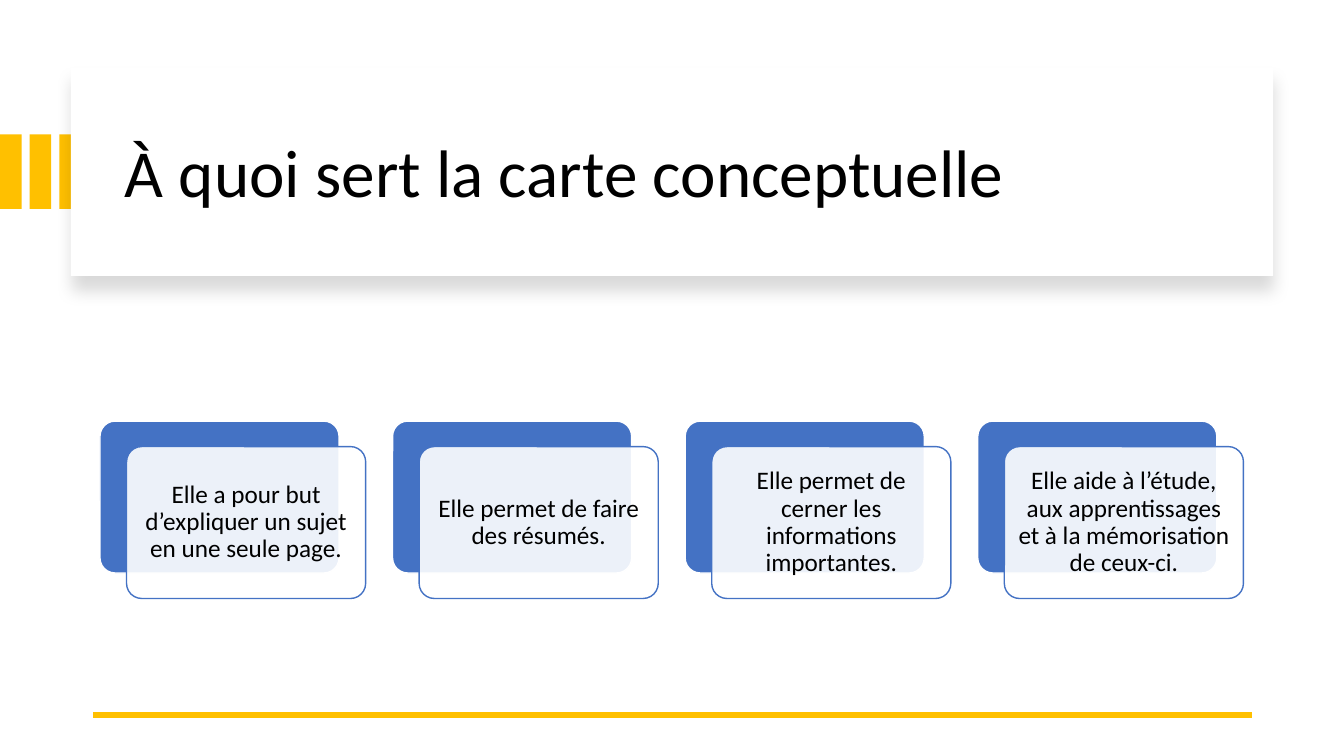
from lxml import etree
from pptx import Presentation
from pptx.dml.color import RGBColor
from pptx.enum import shapes, text
from pptx.oxml import ns
from pptx.util import Pt

COLORS = {"gold": "FFC000", "blue": "4472C4", "white": "FFFFFF", "black": "000000"}
FONT = "Calibri"
TITLE = "À quoi sert la carte conceptuelle"
PURPOSES = [
    "Elle a pour but d’expliquer un sujet en une seule page.",
    "Elle permet de faire des résumés.",
    "Elle permet de cerner les informations importantes.",
    "Elle aide à l’étude, aux apprentissages et à la mémorisation de ceux-ci.",
]
CARD_LEFT, CARD_TOP, CARD_PITCH = 71.4, 300.8, 209
CARD_W, CARD_H = 170.8, 108.5
FRONT_DX, FRONT_DY = 19, 18.2
BAR_PITCH = 21.2


def rgb(name):
    return RGBColor.from_string(COLORS[name])


def sub(parent, tag, **attrs):
    return etree.SubElement(parent, ns.qn(tag), {k: str(v) for k, v in attrs.items()})


def add_box(parent, kind, left, top, width, height, fill, line=None):
    sp = parent.add_shape(kind, Pt(left), Pt(top), Pt(width), Pt(height))
    sp.shadow.inherit = False
    sp.fill.solid()
    sp.fill.fore_color.rgb = rgb(fill)
    if line:
        sp.line.color.rgb = rgb(line)
        sp.line.width = Pt(1)
    else:
        sp.line.fill.background()
    return sp


def add_rect(parent, left, top, width, height, fill):
    return add_box(parent, shapes.MSO_SHAPE.RECTANGLE, left, top, width, height, fill)


def add_rounded(parent, left, top, fill, line):
    sp = add_box(parent, shapes.MSO_SHAPE.ROUNDED_RECTANGLE,
                 left, top, CARD_W, CARD_H, fill, line)
    sp.adjustments[0] = 0.1
    return sp


def write_text(sp, content, size, align):
    tf = sp.text_frame
    tf.word_wrap = True
    tf.vertical_anchor = text.MSO_ANCHOR.MIDDLE
    p = tf.paragraphs[0]
    p.alignment = align
    p.line_spacing = 0.9
    r = p.add_run()
    r.text = content
    r.font.size = Pt(size)
    r.font.name = FONT
    r.font.color.rgb = rgb("black")


def add_soft_shadow(sp):
    """Cast a pale, blurred shadow straight down."""
    effects = sp._element.spPr.find(ns.qn("a:effectLst"))
    shadow = sub(effects, "a:outerShdw", blurRad=Pt(11), dist=Pt(10),
                 dir=90 * 60000, algn="t", rotWithShape=0)
    color = sub(shadow, "a:srgbClr", val=COLORS["black"])
    sub(color, "a:alpha", val=15000)


def add_title(s):
    bars = s.shapes.add_group_shape().shapes
    for i in range(3):
        add_rect(bars, i * BAR_PITCH, 96, 15.4, 53.3, "gold")
    add_soft_shadow(add_rect(s.shapes, 50.7, 48.2, 858.7, 149, "white"))
    sp = s.shapes.add_textbox(Pt(82.2), Pt(64), Pt(801), Pt(122.4))
    write_text(sp, TITLE, 48, text.PP_ALIGN.LEFT)


def add_card(s, left, content):
    """Place a blue plate and, shifted over it, a translucent white text plate."""
    card = s.shapes.add_group_shape().shapes
    add_rounded(card, left, CARD_TOP, "blue", "white")
    front = add_rounded(card, left + FRONT_DX, CARD_TOP + FRONT_DY, "white", "blue")
    fill = front._element.spPr.find(ns.qn("a:solidFill"))
    sub(fill[0], "a:alpha", val=90000)
    tf = front.text_frame
    tf.margin_left = tf.margin_right = tf.margin_top = tf.margin_bottom = Pt(5)
    write_text(front, content, 18, text.PP_ALIGN.CENTER)


def add_rule(s):
    line = s.shapes.add_connector(shapes.MSO_CONNECTOR.STRAIGHT,
                                  Pt(894.2), Pt(510.5), Pt(66.2), Pt(510.5))
    line.line.color.rgb = rgb("gold")
    line.line.width = Pt(4.5)
    sub(line._element.spPr, "a:effectLst")


def main():
    prs = Presentation()
    prs.slide_width, prs.slide_height = Pt(960), Pt(540)
    s = prs.slides.add_slide(prs.slide_layouts[6])
    add_title(s)
    add_rule(s)
    for i, purpose in enumerate(PURPOSES):
        add_card(s, CARD_LEFT + i * CARD_PITCH, purpose)
    prs.save("out.pptx")


if __name__ == "__main__":
    main()
